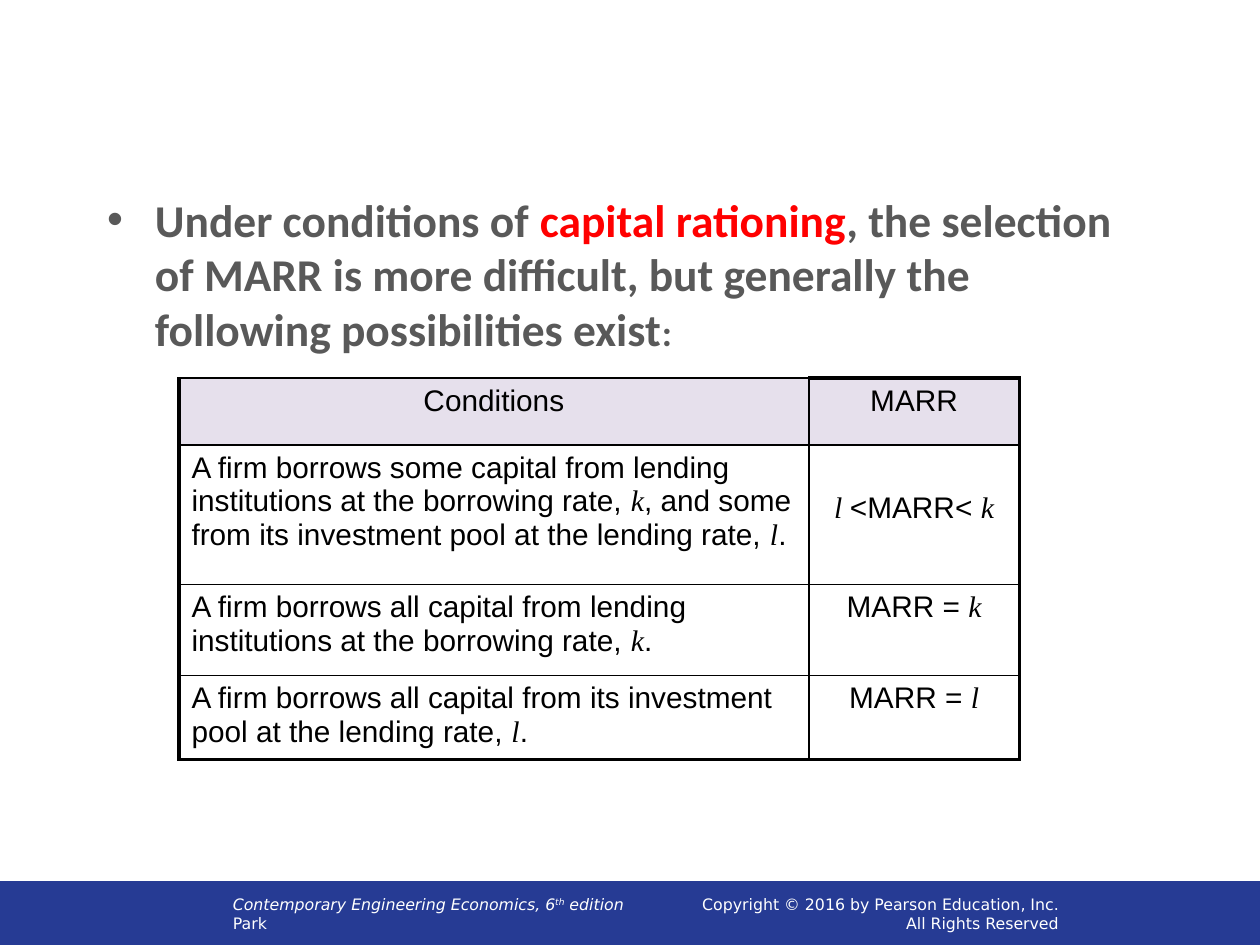
from lxml import etree
from pptx import Presentation
from pptx.dml.color import RGBColor
from pptx.enum import shapes, text
from pptx.oxml.ns import qn
from pptx.util import Inches, Pt

NAVY = RGBColor(0x26, 0x3B, 0x94)
WHITE = RGBColor(0xFF, 0xFF, 0xFF)
GREY = RGBColor(0x59, 0x59, 0x59)
RED = RGBColor(0xFF, 0x00, 0x00)
BLACK = RGBColor(0x00, 0x00, 0x00)
LILAC = RGBColor(0xE6, 0xE0, 0xEC)


def add_run(p, words, size, font, color, bold=False, italic=False):
    r = p.add_run()
    r.text = words
    r.font.size, r.font.name = Pt(size), font
    r.font.bold, r.font.italic = bold, italic
    r.font.color.rgb = color
    return r


def add_border(cell, side, width):
    ln = etree.SubElement(cell._tc.get_or_add_tcPr(), qn("a:ln" + side), w=str(Pt(width)))
    fill = etree.SubElement(ln, qn("a:solidFill"))
    etree.SubElement(fill, qn("a:srgbClr"), val=str(BLACK))


prs = Presentation()
prs.slide_width, prs.slide_height = Inches(10), Inches(7.5)
s = prs.slides.add_slide(prs.slide_layouts[1])
title = s.shapes.title
title._element.getparent().remove(title._element)

# Footer bar
bar = s.shapes.add_shape(shapes.MSO_SHAPE.RECTANGLE, 0, Inches(7), Inches(10), Inches(0.5))
bar.shadow.inherit = False
bar.fill.solid()
bar.fill.fore_color.rgb = NAVY
bar.line.color.rgb = NAVY
bar.line.width = Pt(0.75)

# Footer texts: lines of (words, italic, baseline)
footers = [
    (1.75, 6.16, text.PP_ALIGN.LEFT,
     [[("Contemporary Engineering Economics, 6", True, None), ("th", True, "30000"),
       (" edition", True, None)],
      [("Park", False, None)]]),
    (4.92, 3.58, text.PP_ALIGN.RIGHT,
     [[("Copyright © 2016 by Pearson Education, Inc.", False, None)],
      [("All Rights Reserved", False, None)]]),
]
for left, width, align, lines in footers:
    tf = s.shapes.add_textbox(Inches(left), Inches(7), Inches(width), Inches(0.5)).text_frame
    tf.word_wrap = True
    tf.vertical_anchor = text.MSO_ANCHOR.MIDDLE
    for i, line in enumerate(lines):
        p = tf.add_paragraph() if i else tf.paragraphs[0]
        p.alignment = align
        for words, italic, baseline in line:
            r = add_run(p, words, 9, "DejaVu Sans", WHITE, italic=italic)
            if baseline:
                r.font._element.set("baseline", baseline)

# Bullet
body = s.placeholders[1]
body.left, body.top = Inches(0.75), Inches(1.47)
body.width, body.height = Inches(8.5), Inches(5.12)
tf = body.text_frame
tf.auto_size = text.MSO_AUTO_SIZE.NONE
p = tf.paragraphs[0]
p.space_before = Pt(0)
pPr = p._p.get_or_add_pPr()
pPr.set("marL", str(Inches(0.38)))
pPr.set("indent", str(Inches(-0.38)))
etree.SubElement(pPr, qn("a:buFont"), typeface="Arial")
etree.SubElement(pPr, qn("a:buChar"), char="•")
for words, size, color in [
    ("Under conditions of ", 26, GREY),
    ("capital rationing", 26, RED),
    (", the selection of MARR is more difficult, but generally the "
     "following possibilities exist", 26, GREY),
    (":", 21, GREY),
]:
    add_run(p, words, size, "Calibri", color, bold=True)

# Table of conditions: text runs alternate between plain words and variables
rows = [
    (["Conditions"], ["MARR"]),
    (["A firm borrows some capital from lending institutions at the borrowing rate, ", "k",
      ", and some from its investment pool at the lending rate, ", "l", "."],
     ["", "l ", "<MARR< ", "k"]),
    (["A firm borrows all capital from lending institutions at the borrowing rate, ", "k", "."],
     ["MARR = ", "k"]),
    (["A firm borrows all capital from its investment pool at the lending rate, ", "l", "."],
     ["MARR = ", "l"]),
]
table = s.shapes.add_table(4, 2, Inches(1.42), Inches(3), Inches(6.67), Inches(3.03)).table
table.first_row = table.horz_banding = False
for column, width in zip(table.columns, (5, 1.67)):
    column.width = Inches(width)
for row, height in zip(table.rows, (0.53, 1.11, 0.72, 0.67)):
    row.height = Inches(height)

for i, row in enumerate(rows):
    for j, parts in enumerate(row):
        cell = table.cell(i, j)
        add_border(cell, "L", 2.25 if j == 0 else 1)
        add_border(cell, "R", 2.25 if j == 1 else 1)
        add_border(cell, "T", 2.25 if (i, j) == (0, 1) else 1)
        add_border(cell, "B", 2.25 if i == 3 else 1)
        if i == 0:
            cell.fill.solid()
            cell.fill.fore_color.rgb = LILAC
        else:
            cell.fill.background()
        p = cell.text_frame.paragraphs[0]
        if i == 0 or j == 1:
            p.alignment = text.PP_ALIGN.CENTER
        for n, words in enumerate(parts):
            variable = n % 2 == 1
            if words:
                add_run(p, words, 17, "Times New Roman" if variable else "Arial", BLACK,
                        italic=variable)
table.cell(1, 1).margin_top = Inches(0.37)

prs.save("out.pptx")
